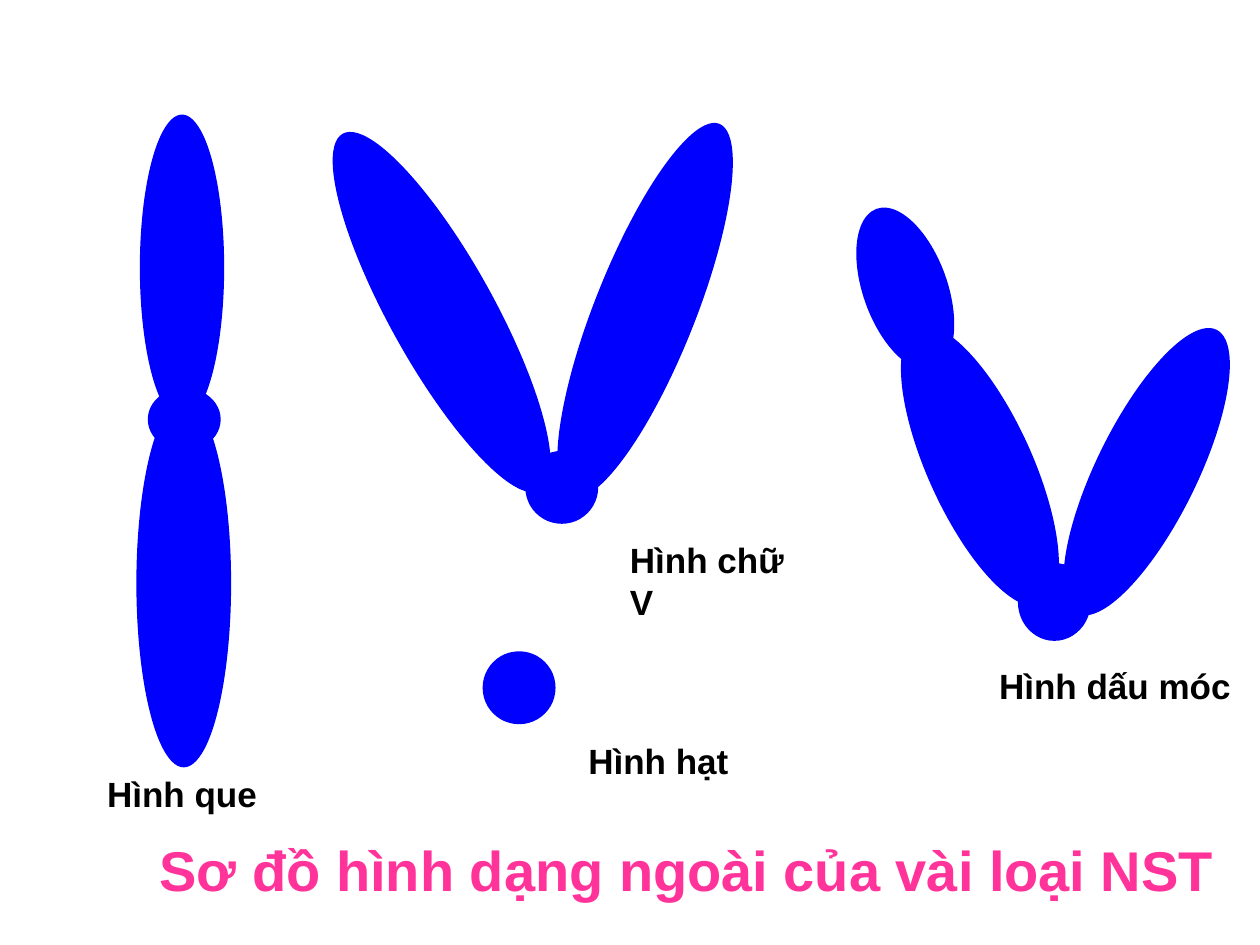
import pptx
import pptx.dml.color
import pptx.enum.shapes
import pptx.enum.text
import pptx.util

COLOURS = {"chromosome": "0000FF", "label": "000000", "title": "FF3399"}
FONT = "Arial"
CENTROMERE = 1.47


def cm_box(origin, offset, size):
    lengths = (origin[0] + offset[0], origin[1] + offset[1], *size)
    return [pptx.util.Cm(length) for length in lengths]


def colour(name):
    return pptx.dml.color.RGBColor.from_string(COLOURS[name])


def add_oval(slide, origin, offset, size, rotation=0):
    oval = slide.shapes.add_shape(
        pptx.enum.shapes.MSO_SHAPE.OVAL, *cm_box(origin, offset, size))
    oval.rotation = rotation
    oval.shadow.inherit = False
    oval.fill.solid()
    oval.fill.fore_color.rgb = colour("chromosome")
    oval.line.fill.background()


def add_text(slide, origin, offset, size, wording, points=20,
             colour_name="label", wrap=False):
    frame = slide.shapes.add_textbox(*cm_box(origin, offset, size)).text_frame
    frame.word_wrap = wrap
    frame.auto_size = pptx.enum.text.MSO_AUTO_SIZE.SHAPE_TO_FIT_TEXT
    frame.text = wording
    font = frame.paragraphs[0].runs[0].font
    font.name = FONT
    font.size = pptx.util.Pt(points)
    font.bold = True
    font.color.rgb = colour(colour_name)


def draw_rod(slide, origin):
    add_oval(slide, origin, (0.91, 0), (1.7, 6.17))
    add_oval(slide, origin, (1.07, 5.51), (CENTROMERE, 1.27))
    add_oval(slide, origin, (0.84, 5.74), (1.91, 7.42))
    add_text(slide, origin, (0, 13.13), (3.53, 1.09), "Hình que")


def draw_v(slide, origin):
    add_oval(slide, origin, (0, 0), (2.11, 8.23), 331)
    add_oval(slide, origin, (4.14, 0.03), (2.03, 8.1), 21.7)
    add_oval(slide, origin, (2.74, 6.91), (CENTROMERE, CENTROMERE))
    add_text(slide, origin, (4.6, 8.56), (4.27, 1.09), "Hình chữ V")


def draw_hook(slide, origin):
    add_oval(slide, origin, (0, 0), (1.7, 3.43), 340.3)
    add_oval(slide, origin, (1.3, 2.21), (2.11, 6.15), 335.6)
    add_oval(slide, origin, (4.7, 2.21), (2.03, 6.38), 26.2)
    add_oval(slide, origin, (3.12, 7.24), (CENTROMERE, 1.57))
    add_text(slide, origin, (2.49, 9.17), (5.23, 1.12), "Hình dấu móc")


def draw_grain(slide, origin):
    add_oval(slide, origin, (0, 0), (CENTROMERE, CENTROMERE))
    add_text(slide, origin, (1.88, 1.65), (3.35, 1.12), "Hình hạt")


def draw_title(slide, origin):
    add_text(slide, origin, (0, 0), (22.43, 1.6),
             "Sơ đồ hình dạng ngoài của vài loại NST", 32, "title", True)


def main():
    deck = pptx.Presentation()
    deck.slide_width = pptx.util.Cm(25.4)
    deck.slide_height = pptx.util.Cm(19.05)
    slide = deck.slides.add_slide(deck.slide_layouts[6])
    draw_v(slide, (7.85, 2.18))
    draw_title(slide, (2.97, 16.71))
    draw_hook(slide, (17.4, 4.11))
    draw_rod(slide, (1.91, 2.31))
    draw_grain(slide, (9.73, 13.13))
    deck.save("out.pptx")


if __name__ == "__main__":
    main()
